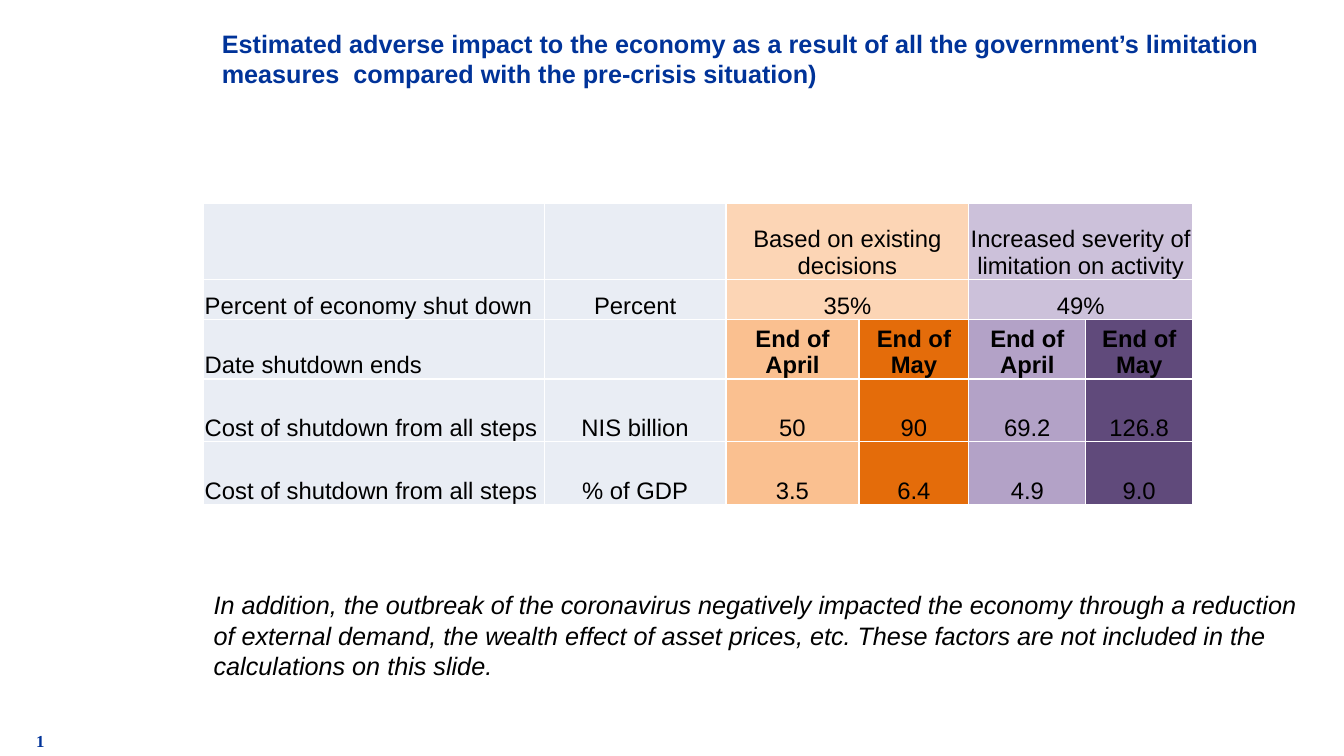
import pptx
import pptx.dml.color
import pptx.enum.text
import pptx.oxml
import pptx.oxml.ns
import pptx.util
from pptx.util import Inches

ALIGN = pptx.enum.text.PP_ALIGN
ANCHOR = pptx.enum.text.MSO_ANCHOR

NAVY, BLACK, WHITE = "003399", "000000", "FFFFFF"
LABEL_FILL, EXISTING_FILL, SEVERE_FILL = "E9EDF4", "FCD5B5", "CCC1DA"
HEADER_FILLS = [LABEL_FILL] * 2 + [EXISTING_FILL] * 2 + [SEVERE_FILL] * 2
VALUE_FILLS = [LABEL_FILL] * 2 + ["FAC090", "E46C0A", "B3A2C7", "604A7B"]

COLUMN_WIDTHS = [3.38, 1.8, 1.32, 1.09, 1.16, 1.06]
ROW_HEIGHTS = [0.75, 0.4, 0.59, 0.62, 0.63]
HEADER_ROWS = 2
DATE_ROW = 2
SHUTDOWN_ROWS = [
    ["", "", "Based on existing decisions", "", "Increased severity of limitation on activity", ""],
    ["Percent of economy shut down", "Percent", "35%", "", "49%", ""],
    ["Date shutdown ends", "", "End of April", "End of May", "End of April", "End of May"],
    ["Cost of shutdown from all steps", "NIS billion", "50", "90", "69.2", "126.8"],
    ["Cost of shutdown from all steps", "% of GDP", "3.5", "6.4", "4.9", "9.0"],
]


def rgb(value):
    return pptx.dml.color.RGBColor.from_string(value)


def write(frame, text, size, color=BLACK, font="Arial", bold=False, italic=False, align=ALIGN.LEFT):
    para = frame.paragraphs[0]
    para.alignment = align
    span = para.add_run()
    span.text = text
    span.font.name = font
    span.font.size = pptx.util.Pt(size)
    span.font.bold = bold
    span.font.italic = italic
    span.font.color.rgb = rgb(color)


def set_title(page, text):
    title = page.shapes.title
    title.left, title.top = Inches(2.1), Inches(0.21)
    title.width, title.height = Inches(10.95), Inches(0.74)
    title.text_frame.word_wrap = True
    title.text_frame.auto_size = pptx.enum.text.MSO_AUTO_SIZE.NONE
    title.text_frame.vertical_anchor = ANCHOR.MIDDLE
    write(title.text_frame, text, 18, NAVY, bold=True)


def add_text(page, left, top, width, height, text, size, anchor=ANCHOR.TOP, **style):
    box = page.shapes.add_textbox(Inches(left), Inches(top), Inches(width), Inches(height))
    box.text_frame.word_wrap = True
    box.text_frame.vertical_anchor = anchor
    write(box.text_frame, text, size, **style)


def add_borders(cell):
    properties = cell._tc.get_or_add_tcPr()
    for side in ("lnL", "lnR", "lnT", "lnB"):
        properties.append(pptx.oxml.parse_xml(
            f'<a:{side} {pptx.oxml.ns.nsdecls("a")} w="12700"><a:solidFill>'
            f'<a:srgbClr val="{WHITE}"/></a:solidFill></a:{side}>'))


def format_cell(cell, fill):
    add_borders(cell)
    cell.fill.solid()
    cell.fill.fore_color.rgb = rgb(fill)
    cell.vertical_anchor = ANCHOR.BOTTOM
    cell.margin_left = cell.margin_right = cell.margin_top = Inches(0.01)
    cell.margin_bottom = 0


def add_shutdown_table(page):
    frame = page.shapes.add_table(
        len(ROW_HEIGHTS), len(COLUMN_WIDTHS), Inches(2.02), Inches(2.02),
        Inches(sum(COLUMN_WIDTHS)), Inches(sum(ROW_HEIGHTS)))
    table = frame.table
    for column, width in zip(table.columns, COLUMN_WIDTHS):
        column.width = Inches(width)
    for row, height in zip(table.rows, ROW_HEIGHTS):
        row.height = Inches(height)
    for r, texts in enumerate(SHUTDOWN_ROWS):
        fills = HEADER_FILLS if r < HEADER_ROWS else VALUE_FILLS
        for c, (text, fill) in enumerate(zip(texts, fills)):
            cell = table.cell(r, c)
            format_cell(cell, fill)
            if text:
                write(cell.text_frame, text, 17, bold=r == DATE_ROW and c > 1,
                      align=ALIGN.CENTER if c else ALIGN.LEFT)
    for r in range(HEADER_ROWS):
        for c in (2, 4):
            table.cell(r, c).merge(table.cell(r, c + 1))


def main():
    deck = pptx.Presentation()
    deck.slide_width, deck.slide_height = Inches(13.33), Inches(7.5)
    page = deck.slides.add_slide(deck.slide_layouts[5])
    set_title(page, "Estimated adverse impact to the economy as a result of all the "
                    "government’s limitation measures  compared with the pre-crisis situation)")
    add_text(page, 0.26, 7, 3.11, 0.5, "1", 12, ANCHOR.BOTTOM,
             color=NAVY, font="Times New Roman", bold=True)
    add_shutdown_table(page)
    add_text(page, 2.02, 5.8, 10.95, 1.01,
             "In addition, the outbreak of the coronavirus negatively impacted the economy "
             "through a reduction of external demand, the wealth effect of asset prices, etc. "
             "These factors are not included in the calculations on this slide.",
             18, italic=True)
    deck.save("out.pptx")


if __name__ == "__main__":
    main()
